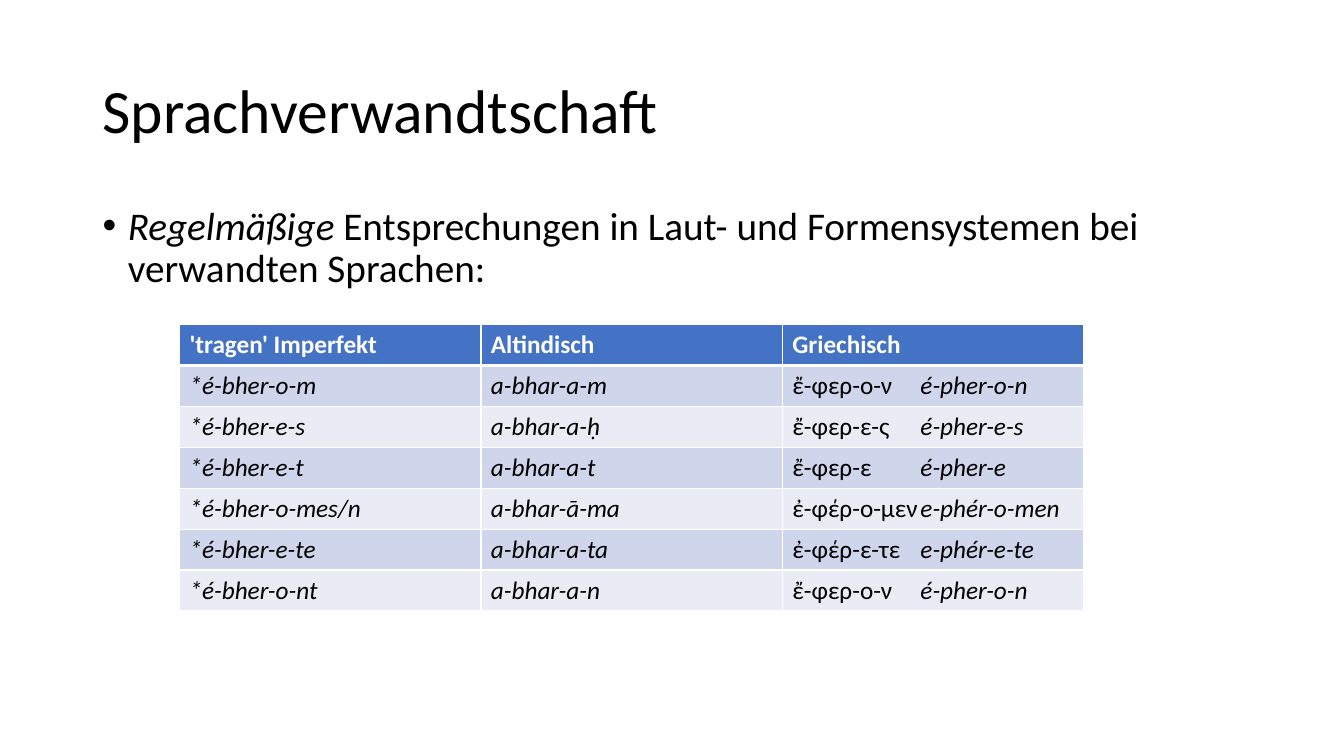
from lxml.etree import SubElement
from pptx import Presentation
from pptx.dml.color import RGBColor
from pptx.enum.text import MSO_ANCHOR
from pptx.oxml.ns import qn
from pptx.util import Inches, Pt

TITLE = "Sprachverwandtschaft"
POINT = [("Regelmäßige", True),
         (" Entsprechungen in Laut- und Formensystemen bei verwandten Sprachen:", False)]
HEADS = ["'tragen' Imperfekt", "Altindisch", "Griechisch"]
# reconstructed form, Old Indic, Greek script, Greek transcription
FORMS = [
    ("*é-bher-o-m", "a-bhar-a-m", "ἔ-φερ-ο-ν", "é-pher-o-n"),
    ("*é-bher-e-s", "a-bhar-a-ḥ", "ἔ-φερ-ε-ς", "é-pher-e-s"),
    ("*é-bher-e-t", "a-bhar-a-t", "ἔ-φερ-ε", "é-pher-e"),
    ("*é-bher-o-mes/n", "a-bhar-ā-ma", "ἐ-φέρ-ο-μεν", "e-phér-o-men"),
    ("*é-bher-e-te", "a-bhar-a-ta", "ἐ-φέρ-ε-τε", "e-phér-e-te"),
    ("*é-bher-o-nt", "a-bhar-a-n", "ἔ-φερ-ο-ν", "é-pher-o-n"),
]
COLORS = {"text": "000000", "white": "FFFFFF", "head": "4472C4",
          "odd": "CFD5EA", "even": "E9EBF5"}
FONT, DOT_FONT, DOT = "Calibri", "Times New Roman", "̣"
COL_W, ROW_H, TAB = 2.99, 0.406, 1.27


def add_run(para, text, size, color="text", bold=False, italic=False, font=FONT):
    run = para.add_run()
    run.text = text
    face = run.font
    face.name, face.size, face.bold, face.italic = font, Pt(size), bold, italic
    face.color.rgb = RGBColor.from_string(COLORS[color])


def add_box(slide, top, height, anchor):
    """Add a full-width text box and return its first paragraph."""
    box = slide.shapes.add_textbox(Inches(0.92), Inches(top), Inches(11.5), Inches(height))
    frame = box.text_frame
    frame.word_wrap = True
    frame.vertical_anchor = anchor
    para = frame.paragraphs[0]
    para.line_spacing = 0.9
    return para


def add_bullet(para):
    props = para._p.get_or_add_pPr()
    props.set("marL", str(Inches(0.25)))
    props.set("indent", str(-Inches(0.25)))
    SubElement(props, qn("a:buFont"), typeface="Arial")
    SubElement(props, qn("a:buChar"), char="•")


def add_tab(para):
    stops = SubElement(para._p.get_or_add_pPr(), qn("a:tabLst"))
    SubElement(stops, qn("a:tab"), pos=str(Inches(TAB)), algn="l")


def style_cell(cell, fill, top, bottom):
    """Draw white borders, then the fill, in the order the format needs."""
    props = cell._tc.get_or_add_tcPr()
    for side, width in (("L", 1), ("R", 1), ("T", top), ("B", bottom)):
        line = SubElement(props, qn("a:ln" + side), w=str(Pt(width)))
        paint = SubElement(line, qn("a:solidFill"))
        SubElement(paint, qn("a:srgbClr"), val=COLORS["white"])
    cell.fill.solid()
    cell.fill.fore_color.rgb = RGBColor.from_string(COLORS[fill])


def fill_form(cells, form):
    root, indic, greek, latin = form
    paras = [cell.text_frame.paragraphs[0] for cell in cells]
    add_run(paras[0], root, 18, italic=True)
    add_run(paras[1], indic.removesuffix(DOT), 18, italic=True)
    if indic.endswith(DOT):
        add_run(paras[1], DOT, 18, italic=True, font=DOT_FONT)
    add_tab(paras[2])
    add_run(paras[2], greek + "\t", 18)
    add_run(paras[2], latin, 18, italic=True)


def add_forms(slide):
    rows, cols = len(FORMS) + 1, len(HEADS)
    table = slide.shapes.add_table(rows, cols, Inches(1.78), Inches(3.22),
                                   Inches(COL_W * cols), Inches(ROW_H * rows)).table
    for col in table.columns:
        col.width = Inches(COL_W)
    for i, row in enumerate(table.rows):
        row.height = Inches(ROW_H)
        fill = "head" if i == 0 else "odd" if i % 2 else "even"
        for cell in row.cells:
            style_cell(cell, fill, 3 if i == 1 else 1, 3 if i == 0 else 1)
        if i:
            fill_form(row.cells, FORMS[i - 1])
        else:
            for cell, head in zip(row.cells, HEADS):
                add_run(cell.text_frame.paragraphs[0], head, 18, "white", bold=True)


def main():
    deck = Presentation()
    deck.slide_width, deck.slide_height = Inches(13.33), Inches(7.5)
    slide = deck.slides.add_slide(deck.slide_layouts[6])
    add_run(add_box(slide, 0.4, 1.45, MSO_ANCHOR.MIDDLE), TITLE, 44)
    point = add_box(slide, 2, 4.76, MSO_ANCHOR.TOP)
    point.space_before = Pt(10)
    add_bullet(point)
    for text, italic in POINT:
        add_run(point, text, 28, italic=italic)
    add_forms(slide)
    deck.save("out.pptx")


if __name__ == "__main__":
    main()
